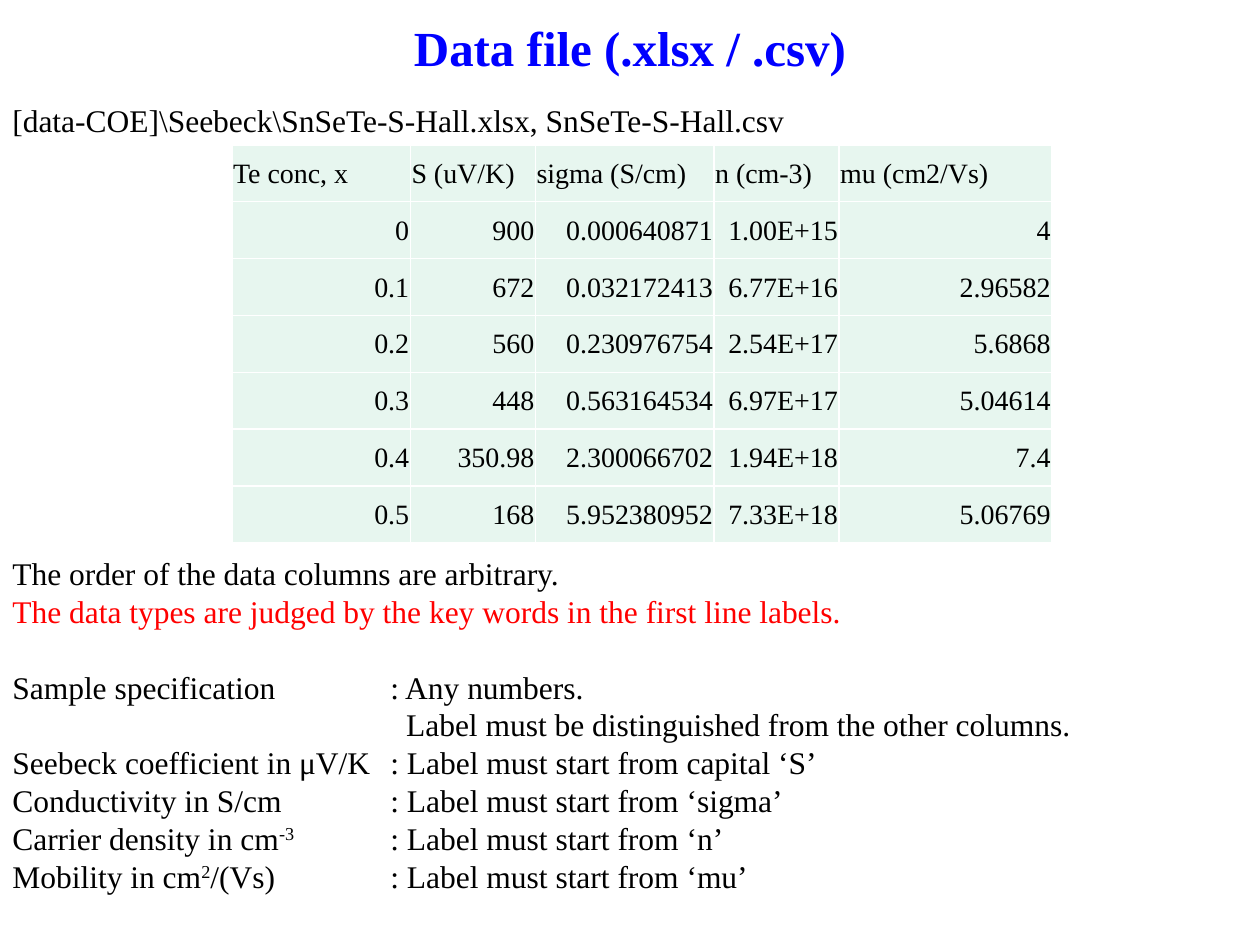
from lxml import etree
from pptx import Presentation
from pptx.dml.color import RGBColor
from pptx.enum.text import MSO_ANCHOR, PP_ALIGN
from pptx.oxml.ns import qn
from pptx.util import Pt

MIDDLE = MSO_ANCHOR.MIDDLE
LEFT, CENTER, RIGHT = PP_ALIGN.LEFT, PP_ALIGN.CENTER, PP_ALIGN.RIGHT
COLORS = {"title": "0000FF", "text": "000000", "alert": "FF0000",
          "cell": "E7F6EF", "border": "FFFFFF"}
FONT = "Times New Roman"
LINE = 21.6
TAB = 216


def style(paragraph, size, color="text", bold=False, align=LEFT):
    paragraph.alignment = align
    paragraph.font.name = FONT
    paragraph.font.size = Pt(size)
    paragraph.font.bold = bold
    paragraph.font.color.rgb = RGBColor.from_string(COLORS[color])


def add_borders(cell):
    properties = cell._tc.get_or_add_tcPr()
    for side in ("lnL", "lnR", "lnT", "lnB"):
        line = etree.SubElement(properties, qn(f"a:{side}"), w=str(Pt(1)))
        fill = etree.SubElement(line, qn("a:solidFill"))
        etree.SubElement(fill, qn("a:srgbClr"), val=COLORS["border"])


deck = Presentation()
deck.slide_width, deck.slide_height = Pt(720), Pt(540)
page = deck.slides.add_slide(deck.slide_layouts[6])

# Title
title = page.shapes.add_textbox(Pt(0), Pt(0), Pt(720), Pt(54)).text_frame
title.word_wrap = True
title.vertical_anchor = MIDDLE
title.text = "Data file (.xlsx / .csv)"
style(title.paragraphs[0], 28, "title", bold=True, align=CENTER)

# Body: spans (text, superscript), blank lines before, colour, tab stop
body_lines = [
    ([(r"[data-COE]\Seebeck\SnSeTe-S-Hall.xlsx, SnSeTe-S-Hall.csv", False)], 0, "text", None),
    ([("The order of the data columns are arbitrary.", False)], 11, "text", None),
    ([("The data types are judged by the key words in the first line labels.", False)],
     0, "alert", None),
    ([("Sample specification\t: Any numbers.", False)], 1, "text", TAB),
    ([("\tLabel must be distinguished from the other columns.", False)], 0, "text", TAB + 9),
    ([("Seebeck coefficient in μV/K\t: Label must start from capital ‘S’", False)],
     0, "text", TAB),
    ([("Conductivity in S/cm\t: Label must start from ‘sigma’", False)], 0, "text", TAB),
    ([("Carrier density in cm", False), ("-3", True),
      ("\t: Label must start from ‘n’", False)], 0, "text", TAB),
    ([("Mobility in cm", False), ("2", True),
      ("/(Vs)\t: Label must start from ‘mu’", False)], 0, "text", TAB),
]
body = page.shapes.add_textbox(Pt(0), Pt(54), Pt(708.5), Pt(465)).text_frame
body.word_wrap = True
for index, (spans, gap, color, stop) in enumerate(body_lines):
    para = body.add_paragraph() if index else body.paragraphs[0]
    style(para, 18, color)
    para.line_spacing = Pt(LINE)
    para.space_before = Pt(gap * LINE)
    for text, superscript in spans:
        span = para.add_run()
        span.text = text
        if superscript:
            span._r.get_or_add_rPr().set("baseline", "30000")
    if stop:
        properties = para._p.get_or_add_pPr()
        stops = etree.Element(qn("a:tabLst"))
        etree.SubElement(stops, qn("a:tab"), pos=str(Pt(stop)), algn="l")
        properties.find(qn("a:defRPr")).addprevious(stops)

# Data table
rows = [
    ("Te conc, x", "S (uV/K)", "sigma (S/cm)", "n (cm-3)", "mu (cm2/Vs)"),
    ("0", "900", "0.000640871", "1.00E+15", "4"),
    ("0.1", "672", "0.032172413", "6.77E+16", "2.96582"),
    ("0.2", "560", "0.230976754", "2.54E+17", "5.6868"),
    ("0.3", "448", "0.563164534", "6.97E+17", "5.04614"),
    ("0.4", "350.98", "2.300066702", "1.94E+18", "7.4"),
    ("0.5", "168", "5.952380952", "7.33E+18", "5.06769"),
]
widths = [102, 71.5, 102, 71.5, 121.5]
row_height = 32.5
table = page.shapes.add_table(len(rows), len(widths), Pt(132.5), Pt(82.8),
                              Pt(sum(widths)), Pt(row_height * len(rows))).table
for column, width in zip(table.columns, widths):
    column.width = Pt(width)
for row_index, values in enumerate(rows):
    table.rows[row_index].height = Pt(row_height)
    for column_index, value in enumerate(values):
        cell = table.cell(row_index, column_index)
        cell.text = value
        cell.vertical_anchor = MIDDLE
        cell.margin_left = cell.margin_right = cell.margin_top = Pt(0.7)
        cell.margin_bottom = Pt(0)
        style(cell.text_frame.paragraphs[0], 16, align=RIGHT if row_index else LEFT)
        add_borders(cell)
        cell.fill.solid()
        cell.fill.fore_color.rgb = RGBColor.from_string(COLORS["cell"])

deck.save("out.pptx")
